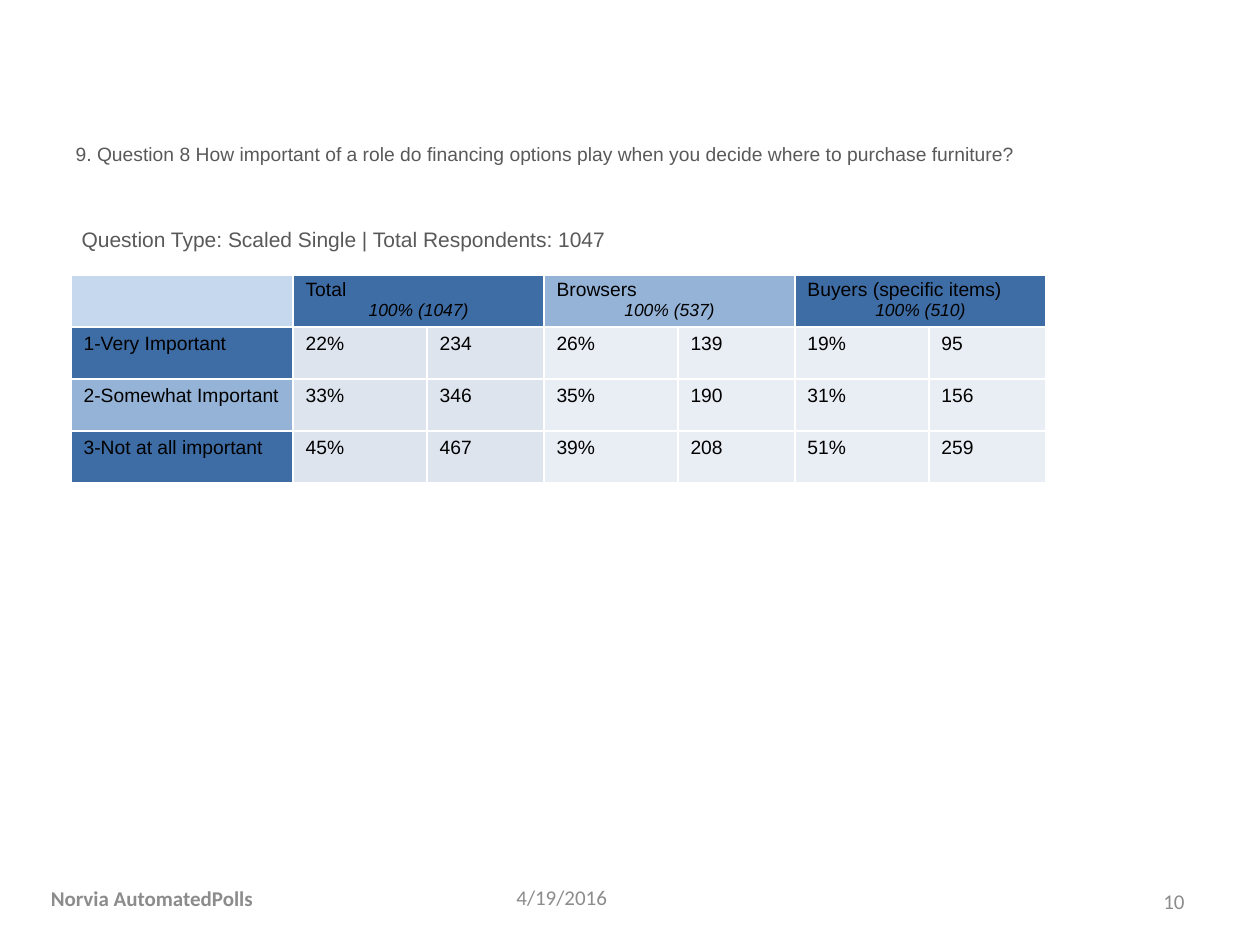
from lxml.etree import SubElement
from pptx import Presentation
from pptx.dml.color import RGBColor
from pptx.enum.text import MSO_ANCHOR as Anchor, MSO_AUTO_SIZE as AutoSize, PP_ALIGN as Align
from pptx.oxml.ns import qn
from pptx.util import Pt

# Content
TITLE = ("9. Question 8 How important of a role do financing options play "
         "when you decide where to purchase furniture?")
SUBTITLE = "Question Type: Scaled Single | Total Respondents: 1047"
GROUPS = [("Total", "100% (1047)"), ("Browsers", "100% (537)"),
          ("Buyers (specific items)", "100% (510)")]
ANSWERS = [
    ("1-Very Important", "22%", "234", "26%", "139", "19%", "95"),
    ("2-Somewhat Important", "33%", "346", "35%", "190", "31%", "156"),
    ("3-Not at all important", "45%", "467", "39%", "208", "51%", "259"),
]
# Text, box, alignment, bold
FOOTERS = [
    ("4/19/2016", (504, 872, 294, 50), Align.LEFT, False),
    ("Norvia AutomatedPolls", (21, 872, 262, 53), Align.CENTER, True),
    ("10", (903, 876, 294, 50), Align.RIGHT, False),
]
COLORS = {"heading": "595959", "footer": "8C8C8C", "cell text": "000000",
          "border": "FFFFFF", "corner": "C5D8ED", "dark": "3E6CA4",
          "light": "95B3D7", "total": "DEE4EE", "segment": "E9EDF4"}

# Layout in px
PX = 914400 / 126
SLIDE_SIZE = (1260, 945)
TITLE_BOX = (63, 136, 1134, 73)
SUBTITLE_BOX = (63, 220, 1134, 53)
TABLE_LEFT, TABLE_TOP, ROW_HEIGHT = 71, 275, 52
COLUMN_WIDTHS = [222] + [134, 117] * len(GROUPS) + [35]


def px(length):
    return round(length * PX)


def write(paragraph, text, size=11, font="Arial", color="cell text",
          bold=False, italic=False, align=Align.LEFT):
    paragraph.alignment = align
    run = paragraph.add_run()
    run.text = text
    run.font.name, run.font.size = font, Pt(size)
    run.font.bold, run.font.italic = bold, italic
    run.font.color.rgb = RGBColor.from_string(COLORS[color])


def place(shape, box, anchor):
    shape.left, shape.top, shape.width, shape.height = map(px, box)
    frame = shape.text_frame
    frame.word_wrap = True
    frame.auto_size = AutoSize.NONE
    frame.vertical_anchor = anchor
    return frame.paragraphs[0]


def add_border(cell, sides):
    properties = cell._tc.get_or_add_tcPr()
    for side in sides:
        line = SubElement(properties, qn(f"a:ln{side}"), w=str(Pt(1)))
        fill = SubElement(line, qn("a:solidFill"))
        SubElement(fill, qn("a:srgbClr"), val=COLORS["border"])


def paint(cell, color):
    cell.fill.solid()
    cell.fill.fore_color.rgb = RGBColor.from_string(COLORS[color])


def stripe(index):
    return "light" if index % 2 else "dark"


presentation = Presentation()
presentation.slide_width, presentation.slide_height = map(px, SLIDE_SIZE)
slide = presentation.slides.add_slide(presentation.slide_layouts[1])

# Question and its type
title, body = slide.placeholders
write(place(title, TITLE_BOX, Anchor.TOP), TITLE, color="heading")
paragraph = place(body, SUBTITLE_BOX, Anchor.TOP)
paragraph_properties = paragraph._p.get_or_add_pPr()
paragraph_properties.set("marL", str(px(6)))
paragraph_properties.set("indent", "0")
SubElement(paragraph_properties, qn("a:buNone"))
paragraph.space_before = Pt(0)
write(paragraph, SUBTITLE, size=12, color="heading")

# Footer
for text, box, align, bold in FOOTERS:
    textbox = slide.shapes.add_textbox(*map(px, box))
    write(place(textbox, box, Anchor.MIDDLE), text, size=12, font="Calibri",
          color="footer", bold=bold, align=align)

# Table grid
row_count = len(ANSWERS) + 1
table = slide.shapes.add_table(
    row_count, len(COLUMN_WIDTHS), px(TABLE_LEFT), px(TABLE_TOP),
    px(sum(COLUMN_WIDTHS)), px(ROW_HEIGHT * row_count)).table
table.first_row = table.horz_banding = False
for column, width in zip(table.columns, COLUMN_WIDTHS):
    column.width = px(width)
last = len(COLUMN_WIDTHS) - 1
for row in table.rows:
    row.height = px(ROW_HEIGHT)
    for index, cell in enumerate(row.cells):
        add_border(cell, "L" if index == last else "LRTB")
        cell.fill.background()

# Header row: each group spans its percentage and count
paint(table.cell(0, 0), "corner")
for index, (name, base) in enumerate(GROUPS):
    cell = table.cell(0, 1 + 2 * index)
    cell.merge(table.cell(0, 2 + 2 * index))
    cell.margin_top = cell.margin_bottom = px(4)
    paint(cell, stripe(index))
    write(cell.text_frame.paragraphs[0], name)
    write(cell.text_frame.add_paragraph(), base, size=10, italic=True,
          align=Align.CENTER)

# Answer rows
for row, answer in enumerate(ANSWERS):
    for column, text in enumerate(answer):
        cell = table.cell(row + 1, column)
        value_color = "total" if column <= 2 else "segment"
        paint(cell, value_color if column else stripe(row))
        write(cell.text_frame.paragraphs[0], text)

presentation.save("out.pptx")
